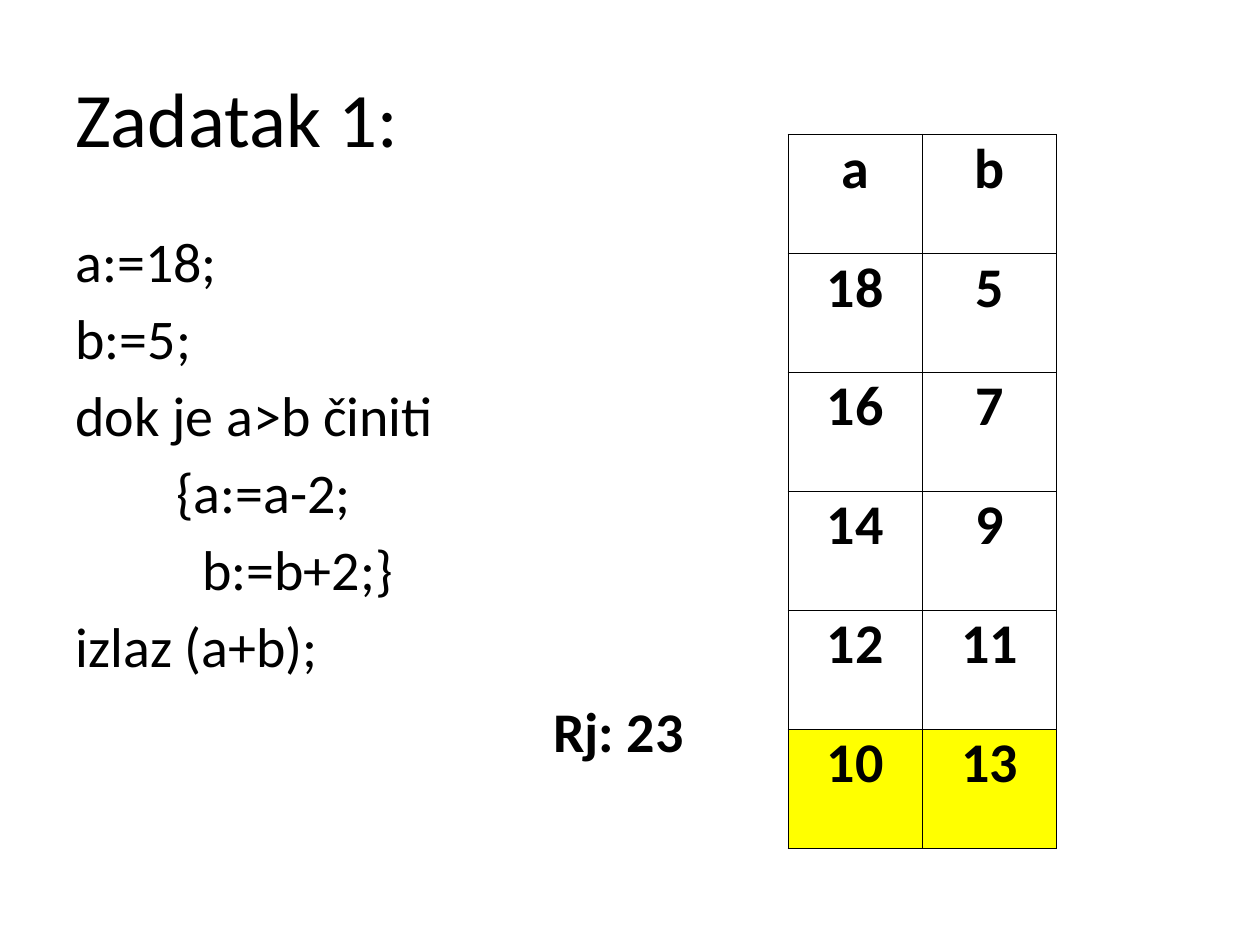
from lxml.etree import SubElement
from pptx import Presentation
from pptx.dml.color import RGBColor
from pptx.enum.text import MSO_ANCHOR as Anchor, PP_ALIGN as Align
from pptx.oxml.ns import qn
from pptx.util import Pt

BLACK, YELLOW = "000000", "FFFF00"
CODE = [
    ("a:=18;", 0),
    ("b:=5;", 0),
    ("dok je a>b činiti", 0),
    ("{a:=a-2;", 57.5),
    ("b:=b+2;}", 72.5),
    ("izlaz (a+b);", 0),
]
TRACE = [("a", "b"), (18, 5), (16, 7), (14, 9), (12, 11), (10, 13)]


def color(value):
    return RGBColor.from_string(value)


class SlideBuilder:
    font = "Calibri"

    def __init__(self, page):
        self.page = page

    def style(self, para, size, bold=False):
        para.font.name = self.font
        para.font.size = Pt(size)
        para.font.bold = bold
        para.font.color.rgb = color(BLACK)

    def text(self, left, top, width, height, lines, size=32, bold=False,
             anchor=Anchor.TOP, before=0):
        """Add a text box; lines holds pairs of text and left indent."""
        box = self.page.shapes.add_textbox(Pt(left), Pt(top), Pt(width), Pt(height))
        frame = box.text_frame
        frame.word_wrap = True
        frame.vertical_anchor = anchor
        for number, (line, indent) in enumerate(lines):
            para = frame.add_paragraph() if number else frame.paragraphs[0]
            para.text = line
            para.space_before = Pt(before)
            if indent:
                para._p.get_or_add_pPr().set("marL", str(Pt(indent)))
            self.style(para, size, bold)

    def border(self, cell):
        """Draw a thin black line on all four sides, placed before the fill."""
        props = cell._tc.get_or_add_tcPr()
        for place, side in enumerate(("lnL", "lnR", "lnT", "lnB")):
            line = SubElement(props, qn(f"a:{side}"), w=str(Pt(1)))
            fill = SubElement(line, qn("a:solidFill"))
            SubElement(fill, qn("a:srgbClr"), val=BLACK)
            props.insert(place, line)

    def table(self, left, top, col_width, row_height, rows):
        """Add a bordered table whose last row is highlighted."""
        columns = len(rows[0])
        frame = self.page.shapes.add_table(
            len(rows), columns, Pt(left), Pt(top),
            Pt(col_width * columns), Pt(row_height * len(rows)))
        grid = frame.table
        grid.first_row = grid.horz_banding = False
        for column in grid.columns:
            column.width = Pt(col_width)
        for row, values in zip(grid.rows, rows):
            row.height = Pt(row_height)
            for cell, value in zip(row.cells, values):
                cell.margin_left = cell.margin_right = Pt(5.4)
                cell.margin_top = cell.margin_bottom = 0
                if values is rows[-1]:
                    cell.fill.solid()
                    cell.fill.fore_color.rgb = color(YELLOW)
                else:
                    cell.fill.background()
                self.border(cell)
                para = cell.text_frame.paragraphs[0]
                para.text = str(value)
                para.alignment = Align.CENTER
                self.style(para, 32, bold=True)


def main():
    deck = Presentation()
    deck.slide_width, deck.slide_height = Pt(720), Pt(540)
    slide = SlideBuilder(deck.slides.add_slide(deck.slide_layouts[6]))
    slide.text(36, 21.6, 648, 90, [("Zadatak 1:", 0)], size=44, anchor=Anchor.MIDDLE)
    slide.text(36, 126, 375, 356.4, CODE, before=5.6)
    slide.table(450.5, 77, 76.6, 68, TRACE)
    slide.text(309, 394.5, 119, 46, [("Rj: 23", 0)], bold=True)
    deck.save("out.pptx")


if __name__ == "__main__":
    main()
